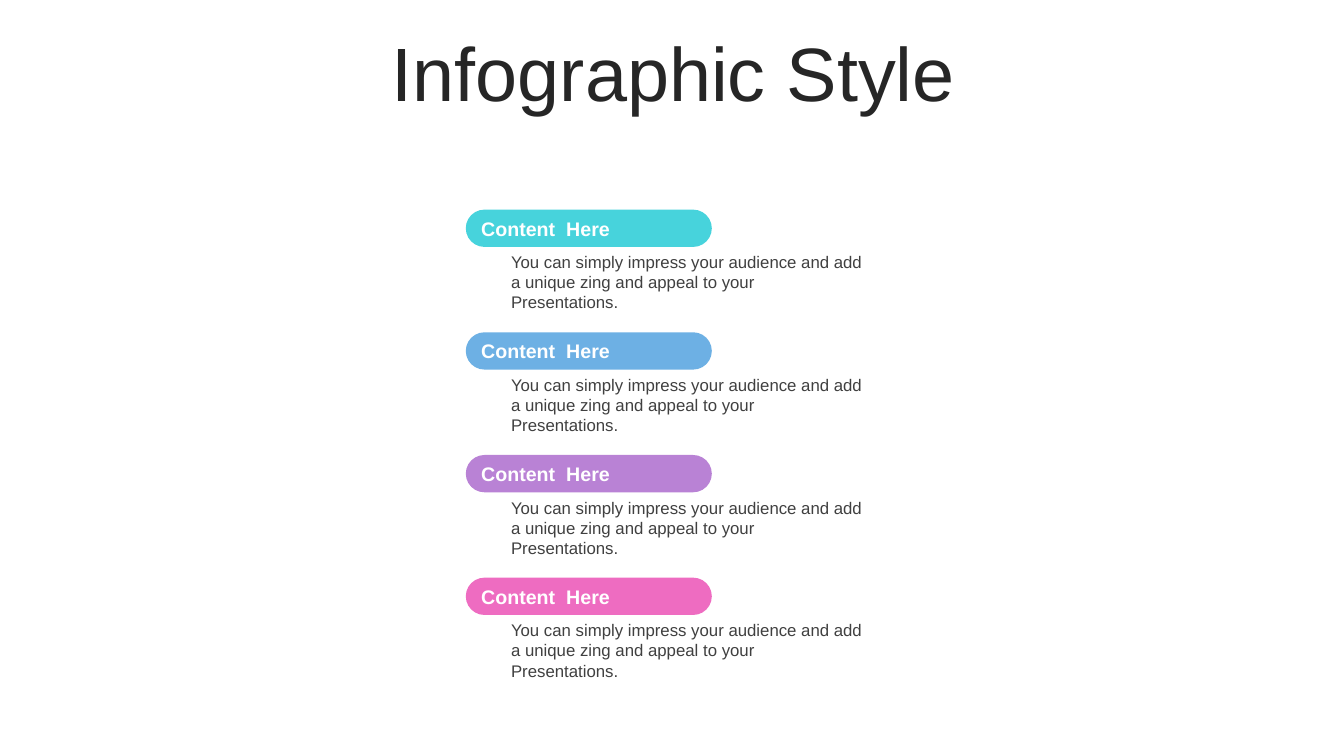
from pptx import Presentation
from pptx.dml.color import RGBColor
from pptx.enum.shapes import MSO_SHAPE
from pptx.enum.text import MSO_ANCHOR, PP_ALIGN
from pptx.util import Inches, Pt

PILL = MSO_SHAPE.ROUNDED_RECTANGLE
TOP, MIDDLE = MSO_ANCHOR.TOP, MSO_ANCHOR.MIDDLE
LEFT, CENTER = PP_ALIGN.LEFT, PP_ALIGN.CENTER

COLORS = {
    "title": "262626", "body": "404040", "label": "FFFFFF",
    "teal": "47D3DC", "blue": "6DB0E4", "purple": "B982D5", "pink": "EE6CC1",
}
BODY = ("You can simply impress your audience and add a unique zing "
        "and appeal to your Presentations.")

# Grid of the list
PILL_X, PILL_W, PILL_H = 4.62, 2.44, 0.37
BODY_X, BODY_W, BODY_H = 4.97, 3.69, 0.5
FIRST_Y, PITCH = 2.08, 1.217


def write(sp, text, size, color, anchor=TOP, align=LEFT, bold=False):
    tf = sp.text_frame
    tf.word_wrap = True
    tf.vertical_anchor = anchor
    p = tf.paragraphs[0]
    p.alignment = align
    r = p.add_run()
    r.text = text
    r.font.name = "Arial"
    r.font.size = Pt(size)
    r.font.bold = bold
    r.font.color.rgb = RGBColor.from_string(COLORS[color])
    return p


prs = Presentation()
prs.slide_width, prs.slide_height = Inches(13.33), Inches(7.5)
s = prs.slides.add_slide(prs.slide_layouts[6])

# Title
sp = s.shapes.add_textbox(Inches(0.35), Inches(0.37), Inches(12.66), Inches(0.79))
p = write(sp, "Infographic Style", 54, "title", MIDDLE, CENTER)
p.line_spacing = 0.9

# Four items: a coloured pill with its description below
for row, color in enumerate(("teal", "blue", "purple", "pink")):
    y = FIRST_Y + row * PITCH
    item = s.shapes.add_group_shape()

    sp = item.shapes.add_shape(PILL, Inches(PILL_X), Inches(y),
                               Inches(PILL_W), Inches(PILL_H))
    sp.adjustments[0] = 0.5
    sp.shadow.inherit = False
    sp.fill.solid()
    sp.fill.fore_color.rgb = RGBColor.from_string(COLORS[color])
    sp.line.fill.background()
    write(sp, "Content  Here", 14, "label", MIDDLE, bold=True)

    sp = item.shapes.add_textbox(Inches(BODY_X), Inches(y + PILL_H),
                                 Inches(BODY_W), Inches(BODY_H))
    write(sp, BODY, 12, "body")

prs.save("out.pptx")
